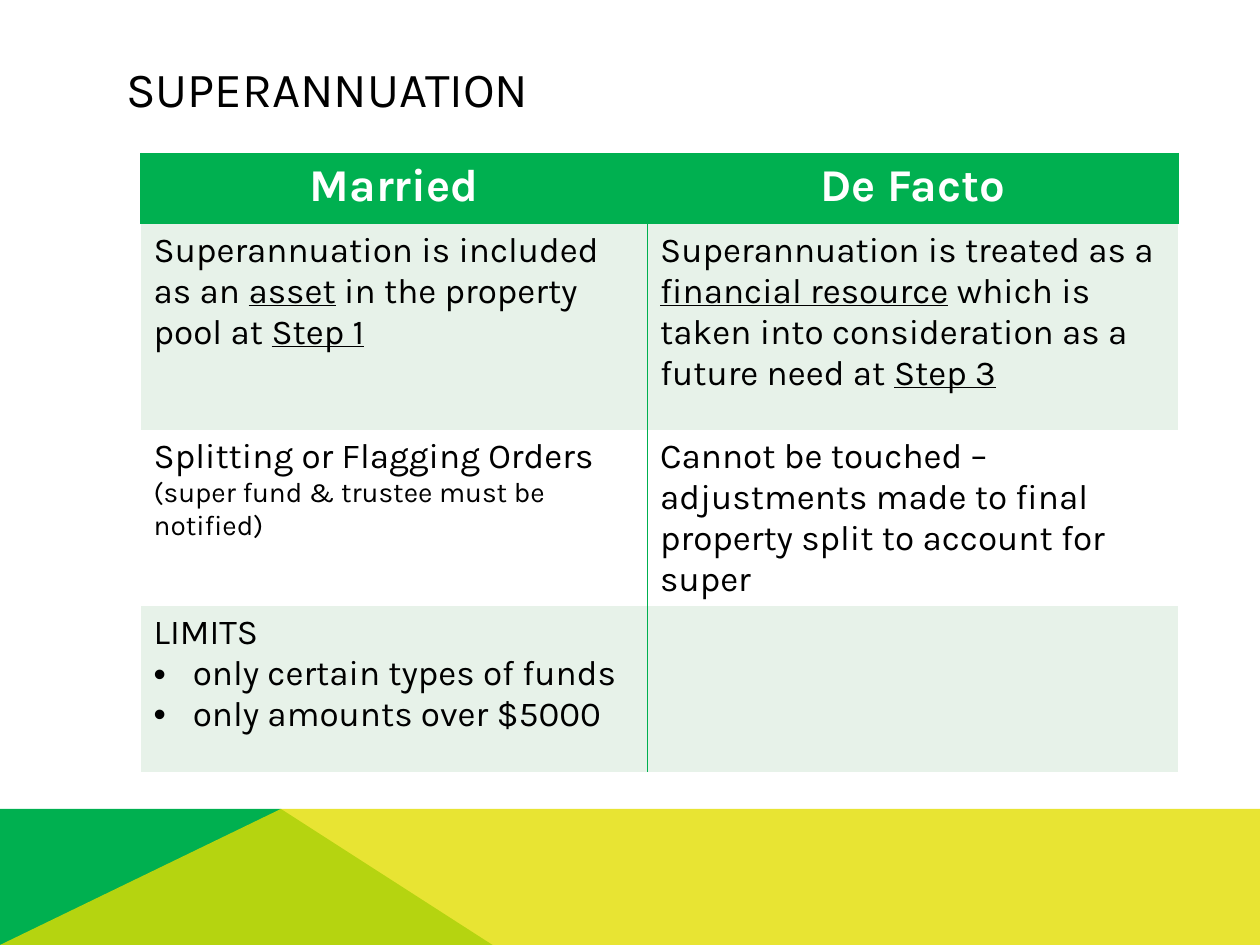
import pptx
import pptx.dml.color
import pptx.enum.text
import pptx.oxml
import pptx.oxml.ns
import pptx.util

INCH = pptx.util.Inches
ALIGN = pptx.enum.text.PP_ALIGN
WIDE, HIGH = 10, 7.5
FONT = "Karla"
HUES = {"green": "00B050", "lime": "E3DE00", "pale": "E7F2E9",
        "white": "FFFFFF", "black": "000000"}
PLAIN = "{2D5ABB26-0587-4C30-8999-92F81FD0307C}"  # no style, no grid

# Table grid
COLS = [4.02, 4.21]
ROWS = [0.56, 1.63, 1, 1.32]
HEADS = ["Married", "De Facto"]

# Each cell lists paragraphs: (runs, format); every second run is underlined
BODY = [
    [[(["Superannuation is included as an ", "asset",
        " in the property pool at ", "Step 1"], {})],
     [(["Superannuation is treated as a ", "financial resource",
        " which is taken into consideration as a future need at ",
        "Step 3"], {})]],
    [[(["Splitting or Flagging Orders"], {}),
      (["(super fund & trustee must be notified)"], {"size": 16})],
     [(["Cannot be touched – adjustments made to final property split "
        "to account for super"], {})]],
    [[(["LIMITS"], {}),
      (["only certain types of funds"], {"dot": True}),
      (["only amounts over $5000"], {"dot": True})],
     []],
]


def tint(name):
    return pptx.dml.color.RGBColor.from_string(HUES[name])


def node(tag, inner="", **attrs):
    pairs = "".join(f' {key}="{val}"' for key, val in attrs.items())
    space = pptx.oxml.ns.nsdecls("a")
    return pptx.oxml.parse_xml(f"<a:{tag} {space}{pairs}>{inner}</a:{tag}>")


def write(para, runs, size=20, hue="black", bold=False, align=ALIGN.LEFT,
          dot=False):
    """Fill a paragraph with runs in one format."""
    para.alignment = align
    if dot:
        props = para._p.get_or_add_pPr()
        props.set("marL", str(INCH(0.31)))
        props.set("indent", str(INCH(-0.31)))
        props.append(node("buFont", typeface="Arial"))
        props.append(node("buChar", char="•"))
    for i, text in enumerate(runs):
        run = para.add_run()
        run.text = text
        font = run.font
        font.name, font.size, font.bold = FONT, pptx.util.Pt(size), bold
        font.color.rgb = tint(hue)
        font.underline = i % 2 == 1


def paint(cell, hue):
    cell.fill.solid()
    cell.fill.fore_color.rgb = tint(hue)


def edge(cell, side):
    """Draw a 1 pt green border on one side of a cell."""
    fill = f'<a:solidFill><a:srgbClr val="{HUES["green"]}"/></a:solidFill>'
    line = node("ln" + side, fill, w=pptx.util.Pt(1))
    cell._tc.get_or_add_tcPr().insert(0, line)


def facet(slide, points, hue, alpha=None):
    """Add a flat polygon, see-through if alpha (percent) is given."""
    spots = [(INCH(x), INCH(y)) for x, y in points]
    build = slide.shapes.build_freeform(*spots[0])
    build.add_line_segments(spots[1:], close=True)
    shape = build.convert_to_shape()
    shape.shadow.inherit = False
    shape.fill.solid()
    shape.fill.fore_color.rgb = tint(hue)
    shape.line.fill.background()
    if alpha:
        color = shape._element.spPr.find(".//" + pptx.oxml.ns.qn("a:srgbClr"))
        color.append(node("alpha", val=alpha * 1000))


def footer(slide):
    top, peak = 6.42, (2.23, 6.42)
    facet(slide, [(0, HIGH), (0, top), peak, (3.91, HIGH)], "green")
    facet(slide, [(0, HIGH), peak, (WIDE, top), (WIDE, HIGH)], "lime", 80)


def title(slide, text):
    box = slide.shapes.title
    box.left, box.top = INCH(0.9), INCH(0.4)
    box.width, box.height = INCH(8.22), INCH(0.6)
    box.text_frame.vertical_anchor = pptx.enum.text.MSO_ANCHOR.MIDDLE
    write(box.text_frame.paragraphs[0], [text], size=28)


def grid(slide):
    frame = slide.shapes.add_table(len(ROWS), len(COLS), INCH(1.12),
                                   INCH(1.22), INCH(sum(COLS)),
                                   INCH(sum(ROWS)))
    table = frame.table
    table.horz_banding = False
    table._tbl.tblPr.find(pptx.oxml.ns.qn("a:tableStyleId")).text = PLAIN
    for col, width in zip(table.columns, COLS):
        col.width = INCH(width)
    for row, height in zip(table.rows, ROWS):
        row.height = INCH(height)

    # Header row
    for c, head in enumerate(HEADS):
        cell = table.cell(0, c)
        paint(cell, "green")
        write(cell.text_frame.paragraphs[0], [head], size=26, hue="white",
              bold=True, align=ALIGN.CENTER)
        for side in "TRL":
            edge(cell, side)

    # Body rows, striped, with a rule between the columns
    for r, line in enumerate(BODY, 1):
        for c, paras in enumerate(line):
            cell = table.cell(r, c)
            paint(cell, "pale" if r % 2 else "white")
            edge(cell, "L" if c else "R")
            text = cell.text_frame
            for i, (runs, style) in enumerate(paras):
                para = text.add_paragraph() if i else text.paragraphs[0]
                write(para, runs, **style)


def main():
    deck = pptx.Presentation()
    deck.slide_width, deck.slide_height = INCH(WIDE), INCH(HIGH)
    slide = deck.slides.add_slide(deck.slide_layouts[5])
    footer(slide)
    title(slide, "SUPERANNUATION")
    grid(slide)
    deck.save("out.pptx")


if __name__ == "__main__":
    main()
